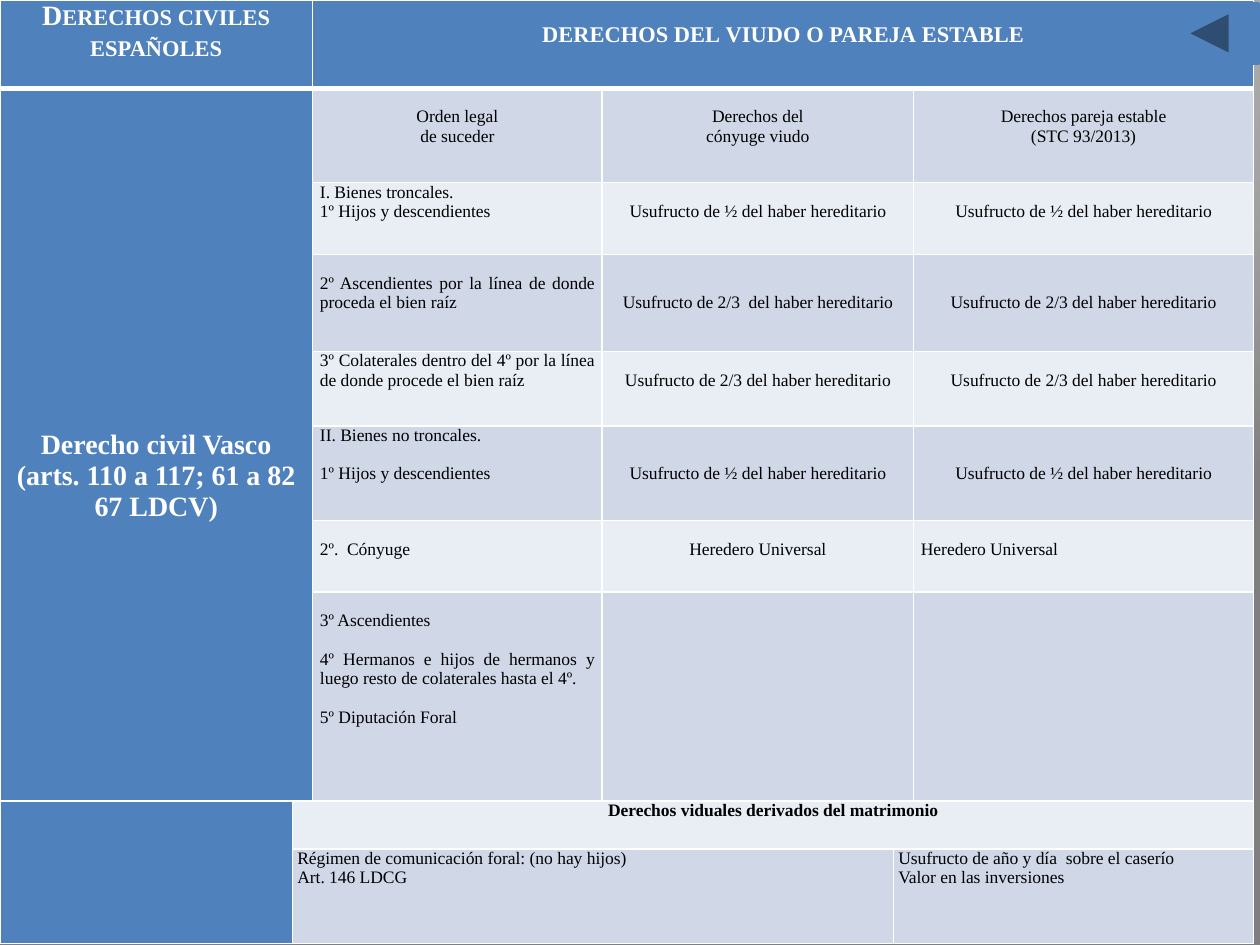
"""Build a slide with a table of widows' rights under Basque civil law."""
from pptx import Presentation, util as u
from pptx.dml.color import RGBColor
from pptx.enum import shapes, text
from pptx.oxml import parse_xml
from pptx.oxml.ns import nsdecls

BLUE, DARK, LIGHT, WHITE, BLACK = "4F81BD", "D0D8E8", "E9EDF4", "FFFFFF", "000000"
LINE = 0.153
CENTER, JUSTIFY, LEFT = text.PP_ALIGN.CENTER, text.PP_ALIGN.JUSTIFY, text.PP_ALIGN.LEFT


def color(value):
    return RGBColor.from_string(value)


def write(cell, content, fill=DARK, size=10, ink=BLACK, bold=False, small_caps=False,
          align=CENTER, top=0, side=0.06, gap=0):
    cell.fill.solid()
    cell.fill.fore_color.rgb = color(fill)
    cell.margin_left = cell.margin_right = u.Inches(side)
    cell.margin_top = u.Inches(top)
    frame = cell.text_frame
    for index, line in enumerate(content.split("\n") if content else []):
        paragraph = frame.add_paragraph() if index else frame.paragraphs[0]
        paragraph.alignment = align
        if index and gap:
            paragraph.space_before = u.Pt(gap)
        run = paragraph.add_run()
        run.text = line
        run.font.name, run.font.size, run.font.bold = "Times New Roman", u.Pt(size), bold
        run.font.color.rgb = color(ink)
        if small_caps:
            run.font._element.set("cap", "small")


presentation = Presentation()
presentation.slide_width, presentation.slide_height = u.Inches(10), u.Inches(7.5)
slide = presentation.slides.add_slide(presentation.slide_layouts[6])

stops = "".join(f'<a:gs pos="{position}"><a:srgbClr val="{value}"/></a:gs>'
                for position, value in ((0, WHITE), (40000, "FEFEFE"), (100000, "7F7F7F")))
slide._element.cSld.insert(0, parse_xml(
    f'<p:bg {nsdecls("p", "a")}><p:bgPr><a:gradFill><a:gsLst>{stops}</a:gsLst>'
    '<a:path path="circle"><a:fillToRect l="50000" t="-80000" r="50000" b="180000"/></a:path>'
    '</a:gradFill><a:effectLst/></p:bgPr></p:bg>'))

widths = [2.32, 0.16, 2.3, 2.31, 0.16, 2.7]
heights = [0.7, 0.75, 0.57, 0.77, 0.59, 0.75, 0.57, 1.66, 0.38, 0.75]
table = slide.shapes.add_table(len(heights), len(widths), 0, 0,
                               u.Inches(9.96), u.Inches(7.5)).table
table.first_row = table.horz_banding = False
for column, width in zip(table.columns, widths):
    column.width = u.Inches(width)
for row, height in zip(table.rows, heights):
    row.height = u.Inches(height)

for row_index, row in enumerate(table.rows):
    for cell in row.cells:
        cell.margin_top = cell.margin_bottom = 0
        properties = cell._tc.get_or_add_tcPr()
        for side in "LRTB":
            thick = (row_index, side) in ((0, "B"), (1, "T"))
            properties.append(parse_xml(
                f'<a:ln{side} {nsdecls("a")} w="{u.Pt(3 if thick else 1)}"><a:solidFill>'
                f'<a:srgbClr val="{WHITE}"/></a:solidFill></a:ln{side}>'))

merges = [(0, 0, 0, 1), (0, 2, 0, 5), (1, 0, 7, 1), (8, 0, 9, 0),
          (8, 1, 8, 5), (9, 1, 9, 3), (9, 4, 9, 5)]
merges += [(row, 3, row, 4) for row in range(1, 8)]
for first_row, first_column, last_row, last_column in merges:
    table.cell(first_row, first_column).merge(table.cell(last_row, last_column))

heading = dict(fill=BLUE, size=16, ink=WHITE, bold=True)
write(table.cell(0, 0), "Derechos civiles\nespañoles", small_caps=True, **heading)
write(table.cell(0, 2), "derechos del viudo o pareja estable", small_caps=True, top=0.14, **heading)
write(table.cell(1, 0), "Derecho civil Vasco\n(arts. 110 a 117; 61 a 82 67 LDCV)", top=2.71, **heading)
write(table.cell(8, 0), "", **heading)

titles = ["Orden legal\nde suceder", "Derechos del\ncónyuge viudo",
          "Derechos pareja estable\n(STC 93/2013)"]
for column, title in zip((2, 3, 5), titles):
    write(table.cell(1, column), title, top=LINE)

half = "Usufructo de ½ del haber hereditario"
thirds = "Usufructo de 2/3 del haber hereditario"
heir = "Heredero Universal"
orders = [
    ("I. Bienes troncales.\n1º Hijos y descendientes", 0, 0, half, half, 1),
    ("2º Ascendientes por la línea de donde proceda el bien raíz", 1, 0,
     "Usufructo de 2/3  del haber hereditario", thirds, 2),
    ("3º Colaterales dentro del 4º por la línea de donde procede el bien raíz", 0, 0,
     thirds, thirds, 1),
    ("II. Bienes no troncales.\n1º Hijos y descendientes", 0, 11, half, half, 2),
    ("2º.  Cónyuge", 1, 0, heir, heir, 1),
    ("3º Ascendientes\n4º Hermanos e hijos de hermanos y luego resto de colaterales hasta el 4º.\n"
     "5º Diputación Foral", 1, 11, "", "", 0),
]
for row, (order, order_top, gap, spouse, partner, right_top) in enumerate(orders, 2):
    fill = DARK if row % 2 else LIGHT
    write(table.cell(row, 2), order, fill, align=JUSTIFY, top=order_top * LINE, gap=gap)
    write(table.cell(row, 3), spouse, fill, top=right_top * LINE)
    write(table.cell(row, 5), partner, fill, top=right_top * LINE,
          align=JUSTIFY if partner == heir else CENTER)

write(table.cell(8, 1), "Derechos viduales derivados del matrimonio", LIGHT, bold=True)
write(table.cell(9, 1), "Régimen de comunicación foral: (no hay hijos)\nArt. 146 LDCG",
      align=LEFT, side=0.04)
write(table.cell(9, 4), "Usufructo de año y día  sobre el caserío\nValor en las inversiones",
      align=LEFT, side=0.04)

back_button = slide.shapes.add_shape(shapes.MSO_SHAPE.ACTION_BUTTON_BACK_OR_PREVIOUS,
                                     u.Inches(9.19), u.Inches(0.03), u.Inches(0.8), u.Inches(0.47))
back_button.shadow.inherit = False
back_button.fill.solid()
back_button.fill.fore_color.rgb = back_button.line.color.rgb = color(BLUE)
back_button.line.width = u.Pt(2)

presentation.save("out.pptx")
